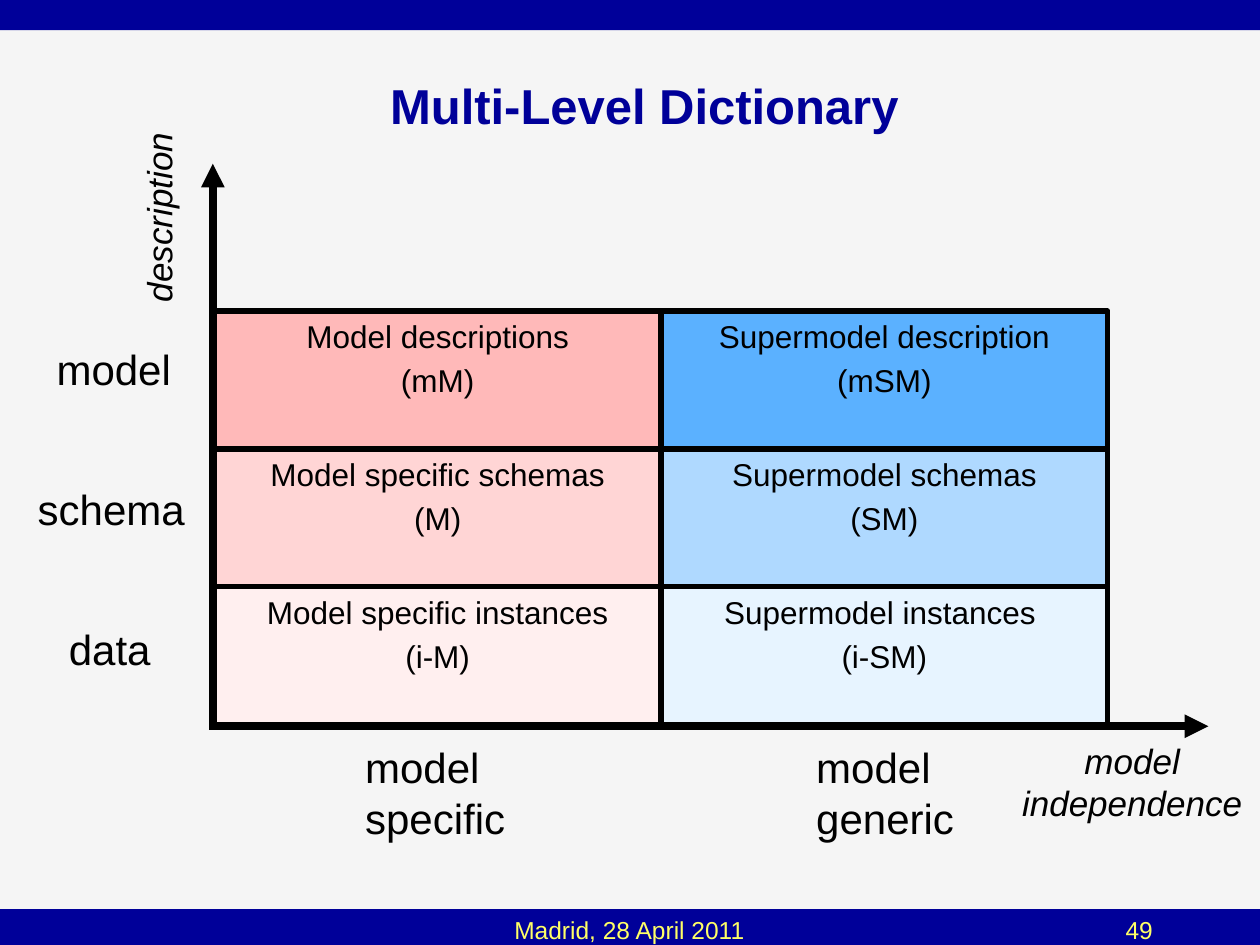
from lxml.etree import SubElement
from pptx import Presentation
from pptx.dml.color import RGBColor
from pptx.enum.shapes import MSO_CONNECTOR, MSO_SHAPE
from pptx.enum.text import MSO_ANCHOR, PP_ALIGN
from pptx.oxml.ns import qn
from pptx.util import Cm, Pt

COLORS = {
    "paper": "F5F5F5", "navy": "000099", "yellow": "FFFF66", "black": "000000",
    "red3": "FFB9B9", "red2": "FFD5D5", "red1": "FFEFEF",
    "blue3": "5BB1FF", "blue2": "AFD9FF", "blue1": "E7F4FF",
}
WIDTH, HEIGHT = 25.4, 19.05
CELLS = [
    [("Model descriptions", "(mM)", "red3"), ("Supermodel description", "(mSM)", "blue3")],
    [("Model specific schemas", "(M)", "red2"), ("Supermodel schemas", "(SM)", "blue2")],
    [("Model specific instances", "(i-M)", "red1"), ("Supermodel instances ", "(i-SM)", "blue1")],
]
ROW_LABELS = [("model", 0.89, 2.82), ("schema", 0.51, 3.48), ("data", 1.14, 2.16)]
COLUMN_LABELS = [(["model", "specific"], 2.79), (["model", "generic"], 2.88)]


def rgb(name):
    """Return the named colour."""
    return RGBColor.from_string(COLORS[name])


def write(tf, lines, size, color="black", align=PP_ALIGN.LEFT, before=0, bold=False, italic=False):
    """Write one paragraph per line into a text frame."""
    for i, line in enumerate(lines):
        p = tf.add_paragraph() if i else tf.paragraphs[0]
        p.alignment = align
        if i:
            p.space_before = Pt(before)
        r = p.add_run()
        r.text = line
        font = r.font
        font.name, font.size, font.bold, font.italic = "Arial", Pt(size), bold, italic
        font.color.rgb = rgb(color)


def add_text(s, box, lines, size, wrap=False, anchor=MSO_ANCHOR.TOP, **style):
    """Add a text box and return it."""
    sp = s.shapes.add_textbox(*map(Cm, box))
    tf = sp.text_frame
    tf.word_wrap, tf.vertical_anchor = wrap, anchor
    write(tf, lines, size, **style)
    return sp


def add_rect(s, box, fill, line=None):
    """Add a filled rectangle and return it."""
    sp = s.shapes.add_shape(MSO_SHAPE.RECTANGLE, *map(Cm, box))
    sp.shadow.inherit = False
    sp.fill.solid()
    sp.fill.fore_color.rgb = rgb(fill)
    if line:
        sp.line.color.rgb = rgb(line)
        sp.line.width = Pt(3)
    else:
        sp.line.fill.background()
    return sp


def add_arrow(s, *points):
    """Add a thick black axis with an arrowhead at its end."""
    sp = s.shapes.add_connector(MSO_CONNECTOR.STRAIGHT, *map(Cm, points))
    sp.line.color.rgb = rgb("black")
    sp.line.width = Pt(4.5)
    SubElement(sp.line._get_or_add_ln(), qn("a:tailEnd"), type="triangle")
    SubElement(sp._element.spPr, qn("a:effectLst"))


def add_header(s, x, y, w, h):
    """Place the top band and the title."""
    add_rect(s, (x, y, w, 0.61), "navy")
    add_text(s, (x + 1.09, y + 0.64, w - 1.6, h - 0.64), ["Multi-Level Dictionary"], 28,
             wrap=True, anchor=MSO_ANCHOR.MIDDLE, color="navy", align=PP_ALIGN.CENTER, bold=True)


def add_footer(s, x, y, w, h):
    """Place the bottom band with the date and the page number."""
    add_rect(s, (x, y, w, h), "navy")
    add_text(s, (x + 5.49, y, 14.4, h), ["Madrid, 28 April 2011"], 14,
             wrap=True, color="yellow", align=PP_ALIGN.CENTER)
    add_text(s, (x + 20.09, y, 3.4, h), ["49"], 14,
             wrap=True, color="yellow", align=PP_ALIGN.RIGHT)


def add_axes(s, x, y, w, h):
    """Place both axes and their captions around the grid's box."""
    bottom = y + h
    add_arrow(s, x - 0.03, bottom + 0.03, x - 0.03, y - 2.97)
    add_arrow(s, x - 0.1, bottom + 0.03, x + w + 2.03, bottom + 0.03)
    sp = add_text(s, (x - 3.1, y - 2.43, 3.94, 1.09), ["description"], 20,
                  align=PP_ALIGN.CENTER, italic=True)
    sp.rotation = 270
    add_text(s, (x + w - 1.98, bottom + 0.17, 4.95, 1.96), ["model", "independence"], 20,
             align=PP_ALIGN.CENTER, italic=True)


def add_grid(s, x, y, w, h):
    """Place the dictionary cells with row and column labels."""
    cw, ch = w / 2, h / 3
    for i, row in enumerate(CELLS):
        for j, (name, symbol, fill) in enumerate(row):
            sp = add_rect(s, (x + j * cw, y + i * ch, cw, ch), fill, "black")
            tf = sp.text_frame
            tf.word_wrap, tf.vertical_anchor = True, MSO_ANCHOR.TOP
            write(tf, [name, symbol], 18, align=PP_ALIGN.CENTER, before=3.6)
    for i, (label, left, width) in enumerate(ROW_LABELS):
        add_text(s, (left, y + 0.54 + i * 2.82, width, 1.27), [label], 24)
    for j, (lines, offset) in enumerate(COLUMN_LABELS):
        add_text(s, (x + j * cw + offset, y + h + 0.22, 3.7, 2.29), lines, 24, wrap=True)


def main():
    """Build and save the slide."""
    prs = Presentation()
    prs.slide_width, prs.slide_height = Cm(WIDTH), Cm(HEIGHT)
    s = prs.slides.add_slide(prs.slide_layouts[6])
    s.background.fill.solid()
    s.background.fill.fore_color.rgb = rgb("paper")
    add_header(s, 0, 0, WIDTH, 3.61)
    add_footer(s, 0, 18.33, WIDTH, 0.72)
    grid = (4.32, 6.27, 18.01, 8.34)
    add_axes(s, *grid)
    add_grid(s, *grid)
    prs.save("out.pptx")


if __name__ == "__main__":
    main()
